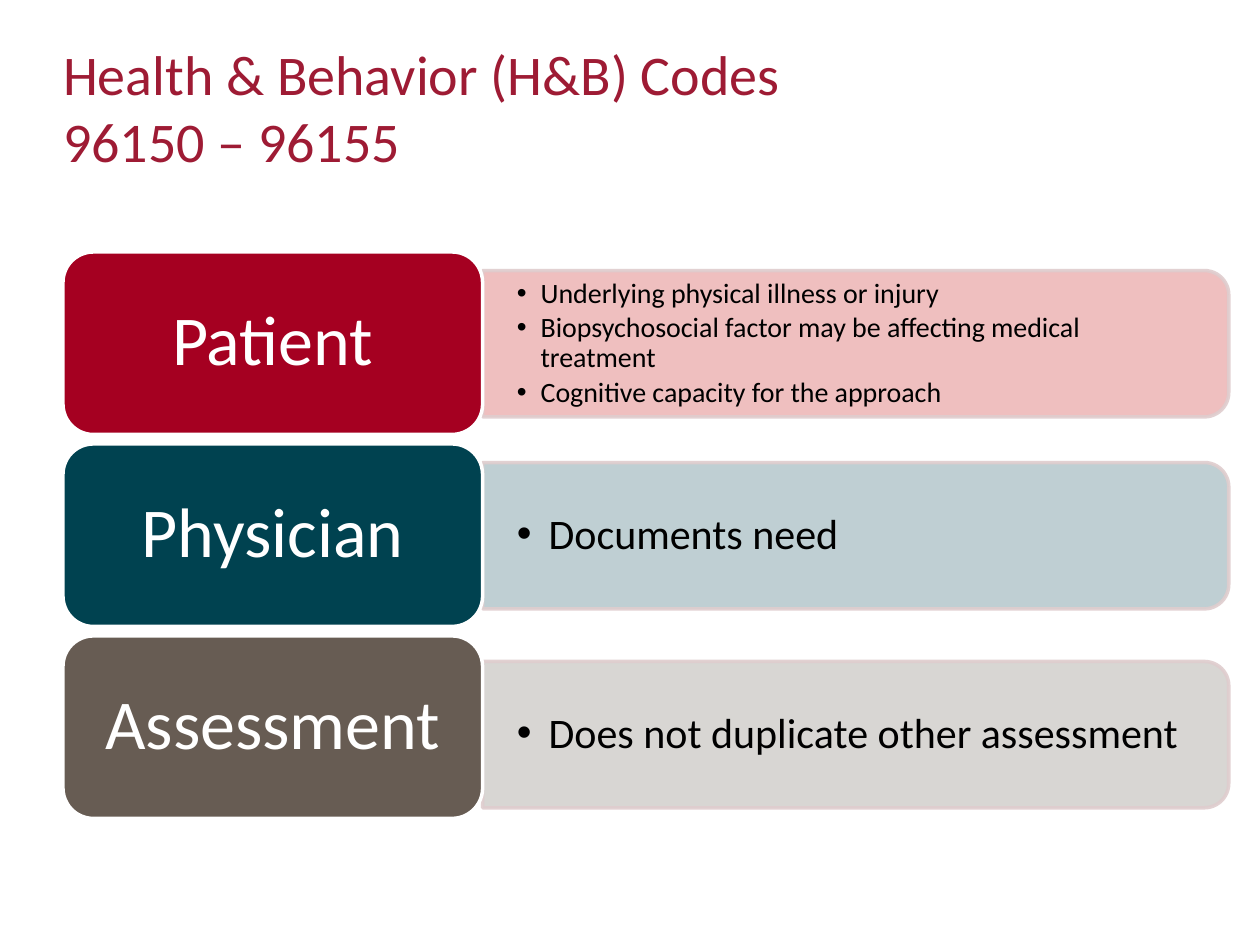
import pptx
import pptx.util
import pptx.dml.color
import pptx.enum.shapes
import pptx.enum.text
import pptx.oxml
import pptx.oxml.ns
from lxml import etree

Cm = pptx.util.Cm
Pt = pptx.util.Pt
RGBColor = pptx.dml.color.RGBColor
Kind = pptx.enum.shapes.MSO_SHAPE
Align = pptx.enum.text.PP_ALIGN
qn = pptx.oxml.ns.qn

FONT = "Calibri"
CRIMSON = RGBColor(0x9E, 0x1B, 0x34)
RED = RGBColor(0xA5, 0x00, 0x21)
BRIGHT = RGBColor(0xC0, 0x00, 0x00)
TEAL = RGBColor(0x00, 0x42, 0x50)
BROWN = RGBColor(0x67, 0x5C, 0x53)
PINK = RGBColor(0xDF, 0xCD, 0xCE)
WHITE = RGBColor(0xFF, 0xFF, 0xFF)
BLACK = RGBColor(0x00, 0x00, 0x00)

LEFT, TOP, STEP = 1.27, 5.08, 3.87
CARD_W, CARD_H = 8.46, 3.68
BAR_W, BAR_H = 15.04, 2.95
BAR_X = LEFT + CARD_W

ROWS = [
    ("Patient", RED, BRIGHT, 6.93, 16, 0.48,
     ["Underlying physical illness or injury",
      "Biopsychosocial factor may be affecting medical treatment",
      "Cognitive capacity for the approach"]),
    ("Physician", TEAL, TEAL, 10.8, 24, 0.64, ["Documents need"]),
    ("Assessment", BROWN, BROWN, 14.81, 24, 0.64,
     ["Does not duplicate other assessment"]),
]


def write(shape, lines, size, color, align=Align.LEFT, pad=(0, 0),
          space=1.0, after=0, hang=0):
    frame = shape.text_frame
    frame.word_wrap = True
    frame.auto_size = pptx.enum.text.MSO_AUTO_SIZE.NONE
    frame.vertical_anchor = pptx.enum.text.MSO_ANCHOR.MIDDLE
    frame.margin_left = frame.margin_right = Cm(pad[0])
    frame.margin_top = frame.margin_bottom = Cm(pad[1])
    for i, line in enumerate(lines):
        para = frame.add_paragraph() if i else frame.paragraphs[0]
        para.text = line
        para.alignment = align
        para.line_spacing = space
        para.space_after = Pt(after)
        if hang:
            props = para._p.get_or_add_pPr()
            props.set("marL", str(Cm(hang)))
            props.set("indent", str(-Cm(hang)))
            etree.SubElement(props, qn("a:buFont")).set("typeface", "Arial")
            etree.SubElement(props, qn("a:buChar")).set("char", "•")
        for run in para.runs:
            run.font.name = FONT
            run.font.size = Pt(size)
            run.font.color.rgb = color


def fade(fill, share):
    tone = fill._xPr.find(qn("a:solidFill"))[0]
    etree.SubElement(tone, qn("a:alpha")).set("val", str(share * 1000))


def block(slide, kind, x, y, w, h, color, edge):
    shape = slide.shapes.add_shape(kind, Cm(x), Cm(y), Cm(w), Cm(h))
    shape.shadow.inherit = False
    shape.fill.solid()
    shape.fill.fore_color.rgb = color
    shape.line.color.rgb = edge
    shape.line.width = Pt(2)
    return shape


def bar(slide, mid, color, lines, size, hang):
    x = BAR_X + (BAR_W - BAR_H) / 2
    shape = block(slide, Kind.ROUND_2_SAME_RECTANGLE, x, mid - BAR_W / 2,
                  BAR_H, BAR_W, color, PINK)
    shape.rotation = 90
    fade(shape.fill, 25)
    fade(shape.line.fill, 90)
    high = 2.67
    box = slide.shapes.add_textbox(Cm(BAR_X), Cm(mid - high / 2),
                                   Cm(14.88), Cm(high))
    write(box, lines, size, BLACK, pad=(0.69, 0.36), space=0.9,
          after=size * 0.15, hang=hang)


def card(slide, y, color, name):
    shape = block(slide, Kind.ROUNDED_RECTANGLE, LEFT, y, CARD_W, CARD_H,
                  color, WHITE)
    write(shape, [name], 40, WHITE, align=Align.CENTER, pad=(0.42, 0.21),
          space=0.9, after=14)


def head(slide, text):
    title = slide.shapes.title
    title.left, title.top = Cm(LEFT), Cm(1.14)
    title.width, title.height = Cm(22.86), Cm(2.03)
    write(title, [text], 32, CRIMSON)


def main():
    deck = pptx.Presentation()
    deck.slide_width, deck.slide_height = Cm(25.4), Cm(19.05)
    slide = deck.slides.add_slide(deck.slide_layouts[5])
    head(slide, "Health & Behavior (H&B) Codes\v96150 – 96155")
    for i, (name, color, tint, mid, size, hang, lines) in enumerate(ROWS):
        bar(slide, mid, tint, lines, size, hang)
        card(slide, TOP + i * STEP, color, name)
    deck.save("out.pptx")


if __name__ == "__main__":
    main()
